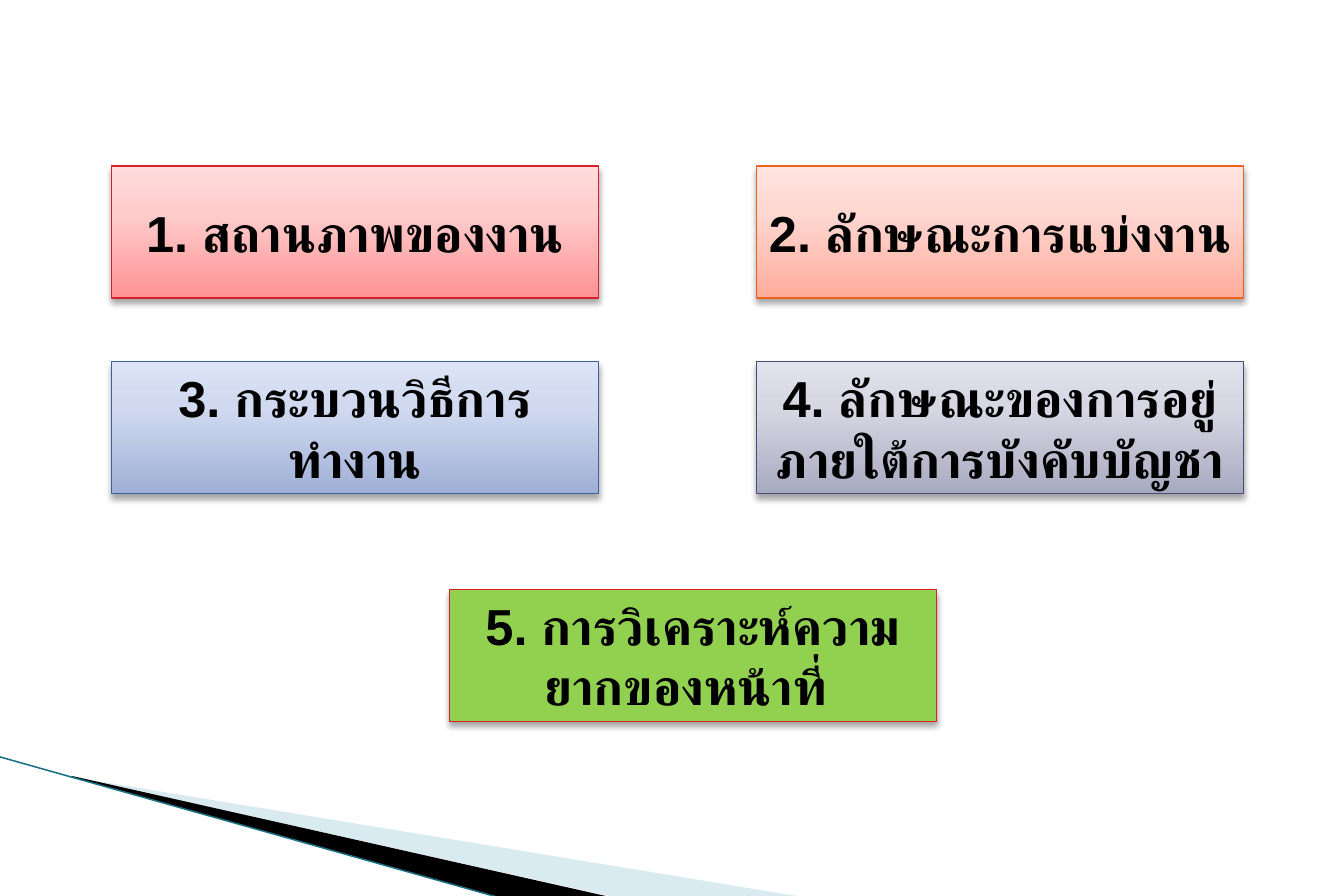
from lxml import etree
from pptx import Presentation
from pptx.dml.color import RGBColor
from pptx.enum.lang import MSO_LANGUAGE_ID as Language
from pptx.enum.shapes import MSO_CONNECTOR as Connector, MSO_SHAPE as Shape
from pptx.enum.text import MSO_ANCHOR as Anchor, PP_ALIGN as Align
from pptx.oxml.ns import qn
from pptx.util import Inches, Pt

BLACK = RGBColor(0x00, 0x00, 0x00)
PALE_BLUE = RGBColor(0xA0, 0xCB, 0xDC)
EDGE_TEAL = RGBColor(0x1B, 0x6F, 0x85)
GREEN = RGBColor(0x92, 0xD0, 0x50)
RED = RGBColor(0xDA, 0x1F, 0x28)
ORANGE = RGBColor(0xEB, 0x64, 0x1B)
BLUE = RGBColor(0x39, 0x63, 0x9D)
INDIGO = RGBColor(0x47, 0x4B, 0x78)

# Gradient colours from the bottom edge to the top edge
RED_FADE = (RGBColor(0xFF, 0x92, 0x94), RGBColor(0xFF, 0xCD, 0xCD), RGBColor(0xFF, 0xDC, 0xDC))
ORANGE_FADE = (RGBColor(0xFF, 0xAC, 0x9C), RGBColor(0xFF, 0xD8, 0xD2), RGBColor(0xFF, 0xE4, 0xDF))
BLUE_FADE = (RGBColor(0x9F, 0xAF, 0xD6), RGBColor(0xD0, 0xD9, 0xEF), RGBColor(0xDC, 0xE3, 0xF6))
INDIGO_FADE = (RGBColor(0xA8, 0xAA, 0xC0), RGBColor(0xD6, 0xD7, 0xE3), RGBColor(0xE2, 0xE2, 0xEC))
FADE_STOPS = (0, 65, 100)

# The page is 3 : 2
PAGE_HEIGHT = 63 / 8
PAGE_WIDTH = PAGE_HEIGHT * 3 / 2
BOX_WIDTH, BOX_HEIGHT = 4.28, 1.16
LEFT, RIGHT, CENTRE = 0.98, 6.65, 3.95
ROWS = (1.46, 3.18, 5.18)

TOPICS = [
    ("1. สถานภาพของงาน", LEFT, ROWS[0], RED_FADE, RED),
    ("2. ลักษณะการแบ่งงาน", RIGHT, ROWS[0], ORANGE_FADE, ORANGE),
    ("3. กระบวนวิธีการทำงาน", LEFT, ROWS[1], BLUE_FADE, BLUE),
    ("4. ลักษณะของการอยู่ภายใต้การบังคับบัญชา", RIGHT, ROWS[1], INDIGO_FADE, INDIGO),
    ("5. การวิเคราะห์ความยากของหน้าที่ ", CENTRE, ROWS[2], GREEN, RED),
]


def add_element(parent, tag, **attributes):
    values = {name: str(value) for name, value in attributes.items()}
    return etree.SubElement(parent, qn(tag), values)


def add_colour(parent, colour, alpha=100):
    element = add_element(parent, "a:srgbClr", val=colour)
    if alpha < 100:
        add_element(element, "a:alpha", val=alpha * 1000)


def fill_fade(shape, colours):
    shape.fill.gradient()
    shape.fill.gradient_angle = 90
    stops = shape._element.spPr.find(qn("a:gradFill")).find(qn("a:gsLst"))
    for stop in list(stops):
        stops.remove(stop)
    for position, colour in zip(FADE_STOPS, colours):
        add_colour(add_element(stops, "a:gs", pos=position * 1000), colour)


def add_shadow(shape):
    shape.shadow.inherit = False
    effects = shape._element.spPr.find(qn("a:effectLst"))
    shadow = add_element(effects, "a:outerShdw", blurRad=Pt(4), dist=Pt(3),
                         dir=90 * 60000, rotWithShape=0)
    add_colour(shadow, BLACK, alpha=35)


def write_text(frame, text, *, size, font, colour, bold=False, align=Align.CENTER):
    para = frame.paragraphs[0]
    para.alignment = align
    span = para.add_run()
    span.text = text
    span.font.size = Pt(size)
    span.font.name = font
    span.font.bold = bold
    span.font.color.rgb = colour
    span.font.language_id = Language.THAI
    # Thai letters take the complex-script font
    add_element(span._r.get_or_add_rPr(), "a:cs", typeface=font)


def add_topic(page, text, left, top, fill, edge):
    box = page.shapes.add_shape(Shape.RECTANGLE, Inches(left), Inches(top),
                                Inches(BOX_WIDTH), Inches(BOX_HEIGHT))
    if isinstance(fill, RGBColor):
        box.fill.solid()
        box.fill.fore_color.rgb = fill
    else:
        fill_fade(box, fill)
    box.line.color.rgb = edge
    box.line.width = Pt(0.75)
    add_shadow(box)
    frame = box.text_frame
    frame.word_wrap = True
    frame.vertical_anchor = Anchor.MIDDLE
    frame.margin_left = frame.margin_right = Inches(0.1)
    frame.margin_top = frame.margin_bottom = Inches(0.05)
    write_text(frame, text, size=32, font="Arial", colour=BLACK, bold=True)


def add_wedge(page, points, colour, alpha=100):
    corners = [(Inches(x), Inches(y)) for x, y in points]
    builder = page.shapes.build_freeform(*corners[0])
    builder.add_line_segments(corners[1:])
    wedge = builder.convert_to_shape()
    wedge.fill.solid()
    wedge.fill.fore_color.rgb = colour
    if alpha < 100:
        element = wedge._element.spPr.find(qn("a:solidFill"))[0]
        add_element(element, "a:alpha", val=alpha * 1000)
    wedge.line.fill.background()
    wedge.shadow.inherit = False


def add_edge(page, start, end, colour, width):
    edge = page.shapes.add_connector(Connector.STRAIGHT,
                                     *(Inches(length) for length in start + end))
    edge.line.color.rgb = colour
    edge.line.width = Pt(width)
    add_element(edge._element.spPr, "a:effectLst")


def main():
    deck = Presentation()
    deck.slide_width, deck.slide_height = Inches(PAGE_WIDTH), Inches(PAGE_HEIGHT)
    page = deck.slides.add_slide(deck.slide_layouts[6])

    # Corner decoration
    add_wedge(page, [(0.64, 6.83), (7.03, 7.88), (5.38, 7.88), (0.65, 6.83)], PALE_BLUE, alpha=40)
    add_wedge(page, [(0.63, 6.82), (5.39, 7.89), (4.39, 7.89), (0.64, 6.83)], BLACK)
    add_edge(page, (-0.01, 6.65), (4.39, 7.89), EDGE_TEAL, 0.95)

    # Topic boxes
    for topic in TOPICS:
        add_topic(page, *topic)

    deck.save("out.pptx")


if __name__ == "__main__":
    main()
